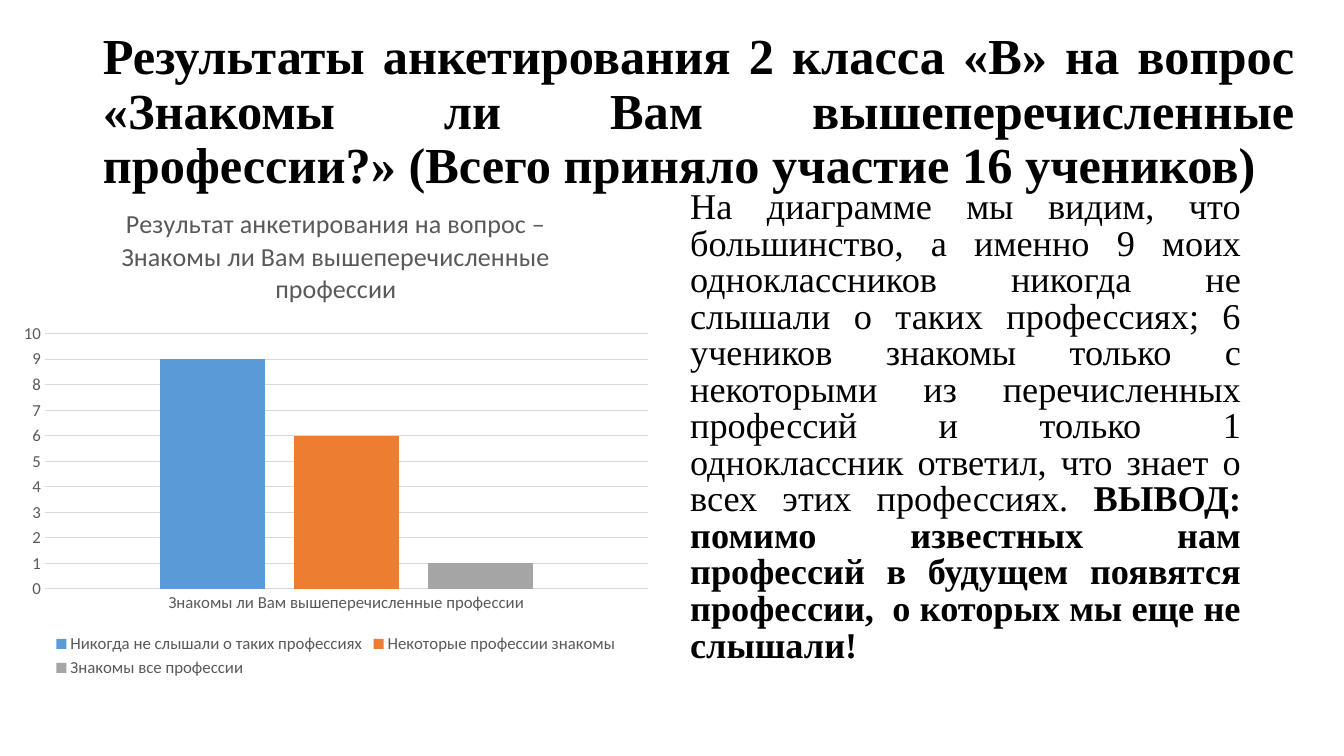
from dataclasses import dataclass

from pptx import Presentation
from pptx.chart.data import CategoryChartData as Data
from pptx.dml.color import RGBColor
from pptx.enum.chart import XL_CHART_TYPE as Kind, XL_LEGEND_POSITION as Side, XL_TICK_MARK as Tick
from pptx.enum.text import MSO_ANCHOR as Anchor, MSO_AUTO_SIZE as Fit, PP_ALIGN as Align
from pptx.oxml.ns import qn
from pptx.util import Inches, Pt

BLACK = RGBColor(0x00, 0x00, 0x00)
GREY = RGBColor(0x59, 0x59, 0x59)
PALE = RGBColor(0xD9, 0xD9, 0xD9)
BLUE = RGBColor(0x5B, 0x9B, 0xD5)
ORANGE = RGBColor(0xED, 0x7D, 0x31)
SILVER = RGBColor(0xA5, 0xA5, 0xA5)
SERIF, SANS = "Times New Roman", "Calibri"
WIDE, HIGH = Inches(13.33), Inches(7.5)
TOP, TALL = 0.245, 0.657  # row shared by the chart and the text


@dataclass
class Box:
    """Place on the slide, as shares of its width and height."""
    left: float
    top: float
    width: float
    height: float

    def spots(self) -> tuple[int, int, int, int]:
        return (int(self.left * WIDE), int(self.top * HIGH),
                int(self.width * WIDE), int(self.height * HIGH))


@dataclass
class Part:
    text: str
    bold: bool = False


@dataclass
class Answer:
    name: str
    count: int
    color: RGBColor


HEAD = [Part("Результаты анкетирования 2 класса «В» на вопрос «Знакомы ли Вам "
             "вышеперечисленные профессии?» (Всего приняло участие 16 учеников)", True)]
BODY = [
    Part("На диаграмме мы видим, что большинство, а именно 9 моих одноклассников "
         "никогда не слышали о таких профессиях; 6 учеников знакомы только с некоторыми "
         "из перечисленных профессий и только 1 одноклассник ответил, что знает о всех "
         "этих профессиях. "),
    Part("ВЫВОД: помимо известных нам профессий в будущем появятся профессии,  "
         "о которых мы еще не слышали!", True),
]
TOPIC = "Знакомы ли Вам вышеперечисленные профессии"
ANSWERS = [
    Answer("Никогда не слышали о таких профессиях", 9, BLUE),
    Answer("Некоторые профессии знакомы", 6, ORANGE),
    Answer("Знакомы все профессии", 1, SILVER),
]


def style(font, name: str, size: float, color: RGBColor, bold: bool = False) -> None:
    font.name, font.size, font.bold = name, Pt(size), bold
    font.color.rgb = color


def write(shape, box: Box, parts: list[Part], size: float, pitch: float,
          anchor: Anchor, before: float = 0) -> None:
    """Fill a placeholder with one justified paragraph without a bullet."""
    shape.left, shape.top, shape.width, shape.height = box.spots()
    frame = shape.text_frame
    frame.word_wrap, frame.auto_size = True, Fit.NONE
    frame.vertical_anchor = anchor
    para = frame.paragraphs[0]
    para.alignment, para.line_spacing = Align.JUSTIFY, pitch
    para.space_before = Pt(before)
    props = para._p.get_or_add_pPr()
    props.set("marL", "0")
    props.set("indent", "0")
    props.append(props.makeelement(qn("a:buNone"), {}))
    for part in parts:
        run = para.add_run()
        run.text = part.text
        style(run.font, SERIF, size, BLACK, part.bold)


def plot(slide, box: Box) -> None:
    data = Data()
    data.categories = [TOPIC]
    for item in ANSWERS:
        data.add_series(item.name, [item.count])
    chart = slide.shapes.add_chart(Kind.COLUMN_CLUSTERED, *box.spots(), data).chart
    style(chart.font, SANS, 10, BLACK)

    # Chart title and legend
    chart.has_title = True
    run = chart.chart_title.text_frame.paragraphs[0].add_run()
    run.text = f"Результат анкетирования на вопрос – {TOPIC}"
    style(run.font, SANS, 18.6, GREY)
    chart.chart_title.include_in_layout = False
    chart.has_legend = True
    chart.legend.position = Side.BOTTOM
    chart.legend.include_in_layout = False
    style(chart.legend.font, SANS, 12, GREY)

    # Axes
    cat, val = chart.category_axis, chart.value_axis
    for axis in (cat, val):
        axis.major_tick_mark = axis.minor_tick_mark = Tick.NONE
        style(axis.tick_labels.font, SANS, 12, GREY)
    val.minimum_scale, val.maximum_scale, val.major_unit = 0, 10, 1
    val.has_major_gridlines = True
    val.format.line.fill.background()
    for line in (cat.format.line, val.major_gridlines.format.line):
        line.color.rgb, line.width = PALE, Pt(0.75)

    # Columns
    group = chart.plots[0]
    group.gap_width, group.overlap, group.vary_by_categories = 219, -27, False
    for series, item in zip(group.series, ANSWERS):
        series.format.fill.solid()
        series.format.fill.fore_color.rgb = item.color


def main() -> None:
    deck = Presentation()
    deck.slide_width, deck.slide_height = WIDE, HIGH
    slide = deck.slides.add_slide(deck.slide_layouts[1])
    head, body = slide.placeholders
    write(head, Box(0.069, 0.053, 0.902, 0.193), HEAD, 36, 0.9, Anchor.MIDDLE)
    write(body, Box(0.506, TOP, 0.425, TALL), BODY, 25.9, 0.84, Anchor.TOP, 10)
    plot(slide, Box(0.008, TOP, 0.484, TALL))
    deck.save("out.pptx")


if __name__ == "__main__":
    main()
